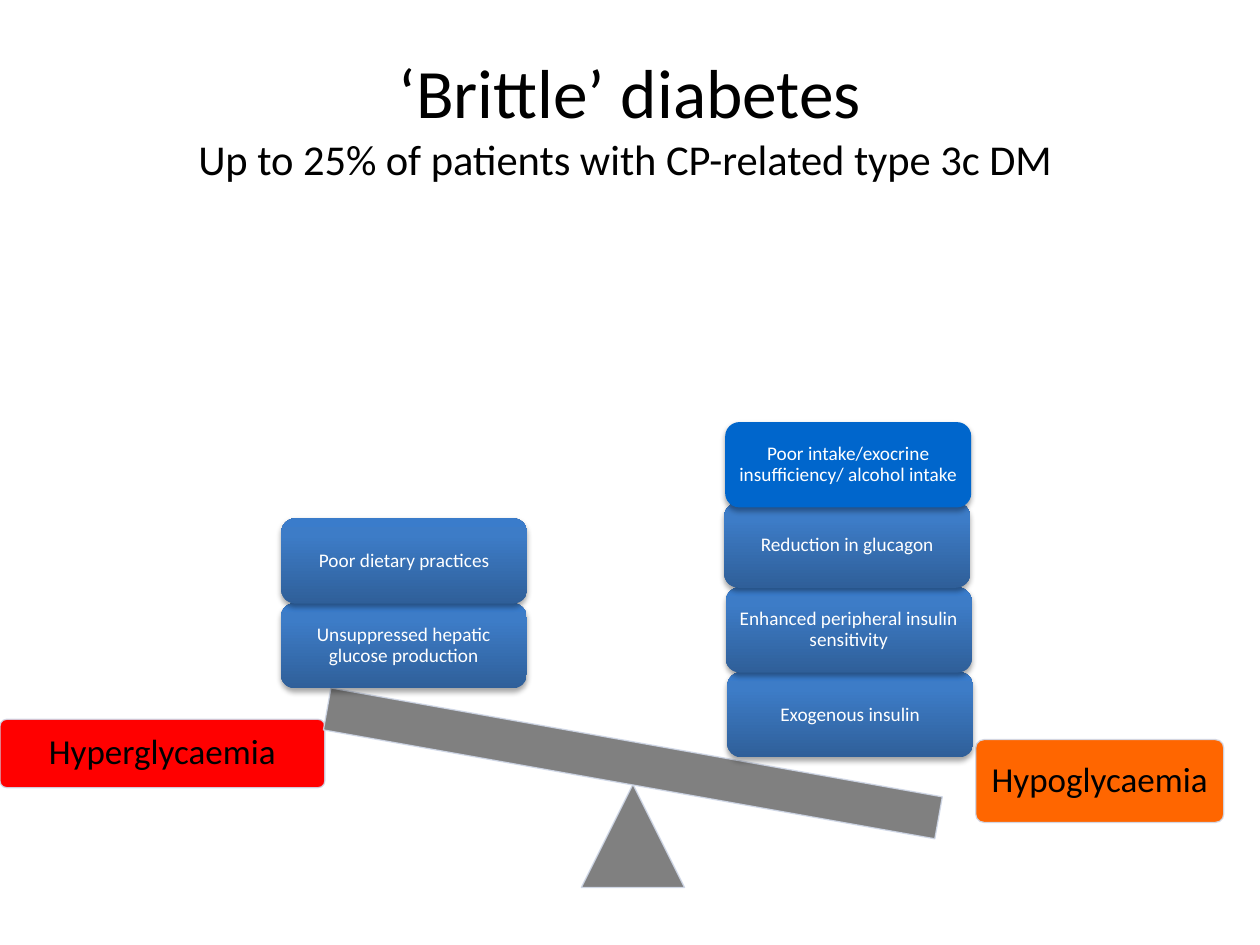
from copy import deepcopy

from lxml.etree import SubElement
from pptx import Presentation
from pptx.dml.color import RGBColor
from pptx.enum.shapes import MSO_SHAPE
from pptx.enum.text import MSO_ANCHOR, MSO_AUTO_SIZE, PP_ALIGN
from pptx.oxml.ns import qn
from pptx.util import Cm, Pt

BLACK = RGBColor(0x00, 0x00, 0x00)
WHITE = RGBColor(0xFF, 0xFF, 0xFF)
RED = RGBColor(0xFF, 0x00, 0x00)
ORANGE = RGBColor(0xFF, 0x66, 0x00)
GREY = RGBColor(0x80, 0x80, 0x80)
OUTLINE = RGBColor(0xD0, 0xD8, 0xE8)
BRIGHT_BLUE = RGBColor(0x00, 0x66, 0xCC)
WEIGHT_BLUES = [
    (0, RGBColor(0x2F, 0x5F, 0x99)),
    (0.8, RGBColor(0x3D, 0x7C, 0xC7)),
    (1, RGBColor(0x3A, 0x7C, 0xCB)),
]

FONT = "Calibri"
WEIGHT_WIDTH, WEIGHT_HEIGHT = 4.96, 1.72

# Weights on each pan, bottom to top: text, left, top (cm)
LEFT_WEIGHTS = [
    ("Unsuppressed hepatic glucose production", 5.66, 12.16),
    ("Poor dietary practices", 5.67, 10.45),
]
RIGHT_WEIGHTS = [
    ("Exogenous insulin", 14.66, 13.55),
    ("Enhanced peripheral insulin sensitivity", 14.63, 11.84),
    ("Reduction in glucagon", 14.6, 10.13),
]
TOP_WEIGHT = ("Poor intake/exocrine insufficiency/ alcohol intake", 14.62, 8.51)


def add_title(slide, heading, subheading):
    title = slide.shapes.title
    title.left, title.top = Cm(1.27), Cm(0.76)
    title.width, title.height = Cm(22.86), Cm(3.18)
    frame = title.text_frame
    frame.auto_size = MSO_AUTO_SIZE.NONE
    frame.vertical_anchor = MSO_ANCHOR.MIDDLE
    paragraph = frame.paragraphs[0]
    paragraph.alignment = PP_ALIGN.CENTER
    paragraph.font.name = FONT
    paragraph.font.color.rgb = BLACK
    heading_run = paragraph.add_run()
    heading_run.text = heading
    heading_run.font.size = Pt(39.6)
    paragraph.add_line_break()
    subheading_run = paragraph.add_run()
    subheading_run.text = subheading
    subheading_run.font.size = Pt(24.3)


def add_part(slide, preset, left, top, width, height):
    part = slide.shapes.add_shape(preset, Cm(left), Cm(top), Cm(width), Cm(height))
    part.shadow.inherit = False
    return part


def outline(part, color):
    """Solid fill with the thin, slightly see-through outline."""
    part.fill.solid()
    part.fill.fore_color.rgb = color
    part.line.color.rgb = OUTLINE
    part.line.width = Pt(0.75)
    line_color = part.line._ln.find(".//" + qn("a:srgbClr"))
    SubElement(line_color, qn("a:alpha"), val="90000")


def write(part, text, size, color, inset):
    frame = part.text_frame
    frame.word_wrap = True
    frame.vertical_anchor = MSO_ANCHOR.MIDDLE
    frame.margin_left = frame.margin_right = Cm(inset)
    frame.margin_top = frame.margin_bottom = Cm(inset)
    paragraph = frame.paragraphs[0]
    paragraph.text = text
    paragraph.alignment = PP_ALIGN.CENTER
    paragraph.line_spacing = 0.9
    paragraph.font.name = FONT
    paragraph.font.size = Pt(size)
    paragraph.font.color.rgb = color


def add_label(slide, text, color, left, top, width, height):
    label = add_part(slide, MSO_SHAPE.ROUNDED_RECTANGLE, left, top, width, height)
    label.adjustments[0] = 0.1
    outline(label, color)
    write(label, text, 20, BLACK, 0.2)


def shade(fill):
    """Three-stop gradient, dark at the bottom."""
    fill.gradient()
    fill.gradient_angle = 90
    stop_list = fill._fill._gradFill.find(qn("a:gsLst"))
    stop_list.append(deepcopy(stop_list[-1]))
    for stop, (position, color) in zip(fill.gradient_stops, WEIGHT_BLUES):
        stop.position = position
        stop.color.rgb = color


def cast_shadow(part):
    effects = part._element.spPr.find(qn("a:effectLst"))
    shadow = SubElement(effects, qn("a:outerShdw"), blurRad="40000",
                        dist="23000", dir="5400000", rotWithShape="0")
    black = SubElement(shadow, qn("a:srgbClr"), val=str(BLACK))
    SubElement(black, qn("a:alpha"), val="35000")


def add_weight(slide, text, left, top, color=None):
    weight = add_part(slide, MSO_SHAPE.ROUNDED_RECTANGLE, left, top,
                      WEIGHT_WIDTH, WEIGHT_HEIGHT)
    if color is None:
        shade(weight.fill)
    else:
        weight.fill.solid()
        weight.fill.fore_color.rgb = color
    weight.line.fill.background()
    cast_shadow(weight)
    write(weight, text, 11, WHITE, 0.13)


def add_seesaw(slide):
    pivot = add_part(slide, MSO_SHAPE.ISOSCELES_TRIANGLE, 11.72, 15.81, 2.08, 2.08)
    beam = add_part(slide, MSO_SHAPE.RECTANGLE, 6.5, 14.96, 12.52, 0.86)
    beam.rotation = 10.1
    for part in (pivot, beam):
        outline(part, GREY)


def main():
    prs = Presentation()
    prs.slide_width, prs.slide_height = Cm(25.4), Cm(19.05)
    slide = prs.slides.add_slide(prs.slide_layouts[5])

    add_title(slide, "‘Brittle’ diabetes",
              "Up to 25% of patients with CP-related type 3c DM ")

    # Balance and its two outcomes
    add_label(slide, "Hyperglycaemia", RED, 0, 14.5, 6.55, 1.38)
    add_label(slide, "Hypoglycaemia", ORANGE, 19.67, 14.91, 5, 1.67)
    add_seesaw(slide)

    # Stacked causes
    for text, left, top in RIGHT_WEIGHTS:
        add_weight(slide, text, left, top)
    add_weight(slide, *TOP_WEIGHT, color=BRIGHT_BLUE)
    for text, left, top in LEFT_WEIGHTS:
        add_weight(slide, text, left, top)

    prs.save("out.pptx")


if __name__ == "__main__":
    main()
